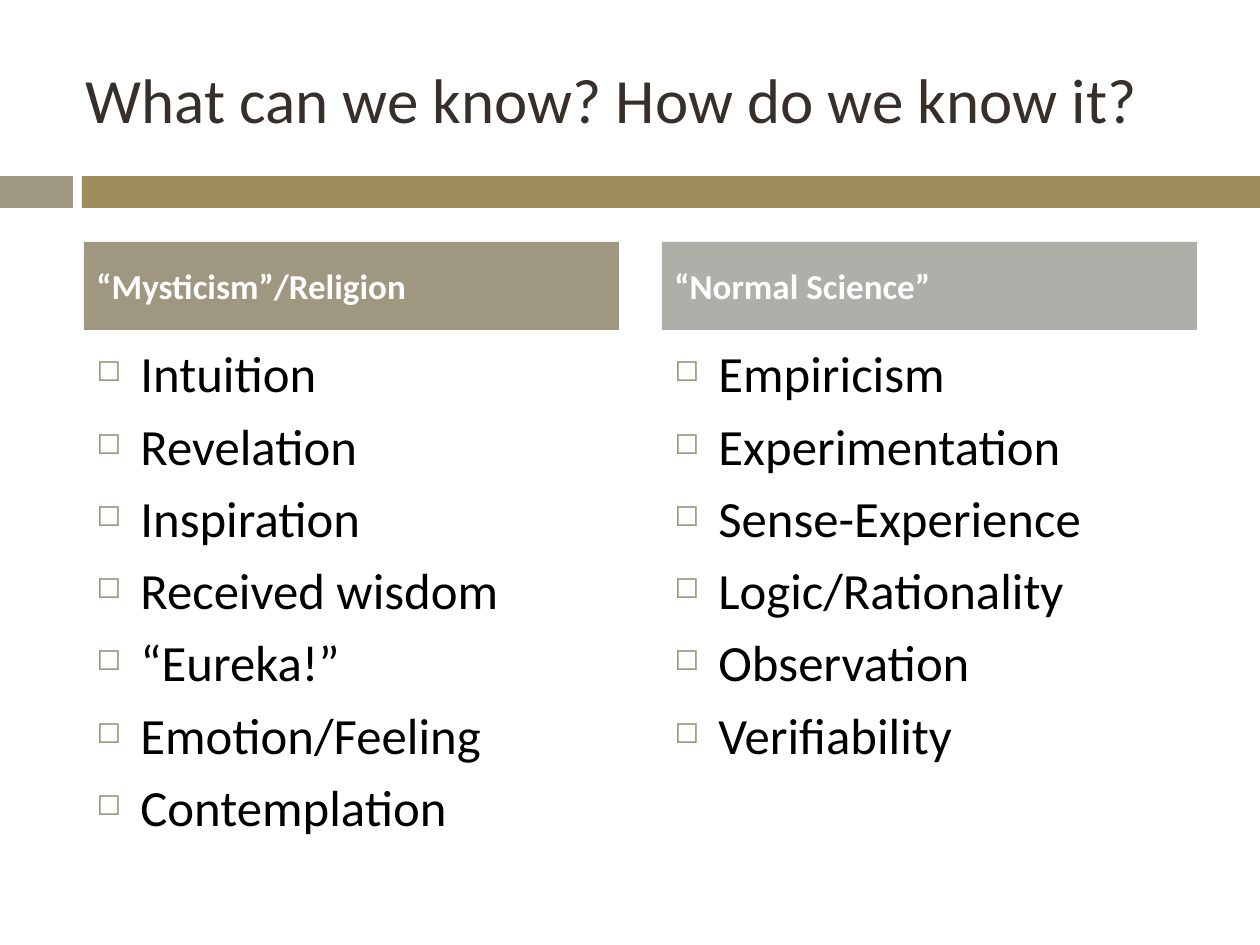
from dataclasses import dataclass

from lxml.etree import SubElement
from pptx import Presentation
from pptx.dml.color import RGBColor as RGB
from pptx.enum.shapes import MSO_SHAPE as Shape
from pptx.enum.text import MSO_ANCHOR as Anchor, PP_ALIGN as Align
from pptx.oxml.ns import qn
from pptx.util import Emu, Pt

EMU_PER_PX = 914400 / 126


@dataclass(frozen=True)
class Theme:
    font: str = "Calibri"
    title: RGB = RGB(0x37, 0x30, 0x2A)
    body: RGB = RGB(0, 0, 0)
    white: RGB = RGB(0xFF, 0xFF, 0xFF)
    taupe: RGB = RGB(0xA0, 0x97, 0x81)
    olive: RGB = RGB(0x9E, 0x8E, 0x5C)
    gray: RGB = RGB(0xAE, 0xAF, 0xA9)
    title_size: int = 36
    body_size: int = 29
    header_size: int = 20
    body_gap: float = 6.5


@dataclass(frozen=True)
class Box:
    x: int
    y: int
    w: int
    h: int


@dataclass(frozen=True)
class Column:
    header: str
    fill: RGB
    items: tuple[str, ...]


THEME = Theme()
COLUMNS = (
    Column("“Mysticism”/Religion", THEME.taupe,
           ("Intuition", "Revelation", "Inspiration", "Received wisdom",
            "“Eureka!”", "Emotion/Feeling", "Contemplation")),
    Column("“Normal Science”", THEME.gray,
           ("Empiricism", "Experimentation", "Sense-Experience",
            "Logic/Rationality", "Observation", "Verifiability")),
)
COLUMN_X, COLUMN_W, COLUMN_STEP = 84, 535, 578
INDENT = 44


def px(n: int) -> Emu:
    return Emu(round(n * EMU_PER_PX))


def place(box: Box) -> tuple[Emu, ...]:
    return px(box.x), px(box.y), px(box.w), px(box.h)


def add_block(s, box: Box, fill: RGB):
    sp = s.shapes.add_shape(Shape.RECTANGLE, *place(box))
    sp.shadow.inherit = False
    sp.fill.solid()
    sp.fill.fore_color.rgb = fill
    sp.line.fill.background()
    return sp


def add_bullet(p) -> None:
    pPr = p._p.get_or_add_pPr()
    pPr.set("marL", str(px(INDENT)))
    pPr.set("indent", str(-px(INDENT)))
    color = SubElement(pPr, qn("a:buClr"))
    SubElement(color, qn("a:srgbClr"), val=str(THEME.taupe))
    SubElement(pPr, qn("a:buSzPct"), val="60000")
    SubElement(pPr, qn("a:buChar"), char="◻")


def write(sp, lines: tuple[str, ...], size: int, color: RGB, anchor: Anchor,
          bold: bool = False, bullets: bool = False) -> None:
    tf = sp.text_frame
    tf.word_wrap = True
    tf.vertical_anchor = anchor
    for i, line in enumerate(lines):
        p = tf.paragraphs[0] if i == 0 else tf.add_paragraph()
        p.alignment = Align.LEFT
        if bullets:
            p.space_before = Pt(THEME.body_gap)
            add_bullet(p)
        r = p.add_run()
        r.text = line
        for name, value in {"name": THEME.font, "size": Pt(size), "bold": bold}.items():
            setattr(r.font, name, value)
        r.font.color.rgb = color


def add_column(s, x: int, column: Column) -> None:
    header = add_block(s, Box(x, 242, COLUMN_W, 88), column.fill)
    write(header, (column.header,), THEME.header_size, THEME.white, Anchor.MIDDLE, bold=True)
    body = s.shapes.add_textbox(*place(Box(x, 336, COLUMN_W, 494)))
    write(body, column.items, THEME.body_size, THEME.body, Anchor.TOP, bullets=True)


def main() -> None:
    prs = Presentation()
    prs.slide_width, prs.slide_height = px(1260), px(945)
    s = prs.slides.add_slide(prs.slide_layouts[6])
    add_block(s, Box(0, 176, 73, 32), THEME.taupe)
    add_block(s, Box(82, 176, 1178, 32), THEME.olive)
    title = s.shapes.add_textbox(*place(Box(73, 38, 1124, 120)))
    write(title, ("What can we know? How do we know it?",),
          THEME.title_size, THEME.title, Anchor.MIDDLE)
    for i, column in enumerate(COLUMNS):
        add_column(s, COLUMN_X + i * COLUMN_STEP, column)
    prs.save("out.pptx")


if __name__ == "__main__":
    main()
